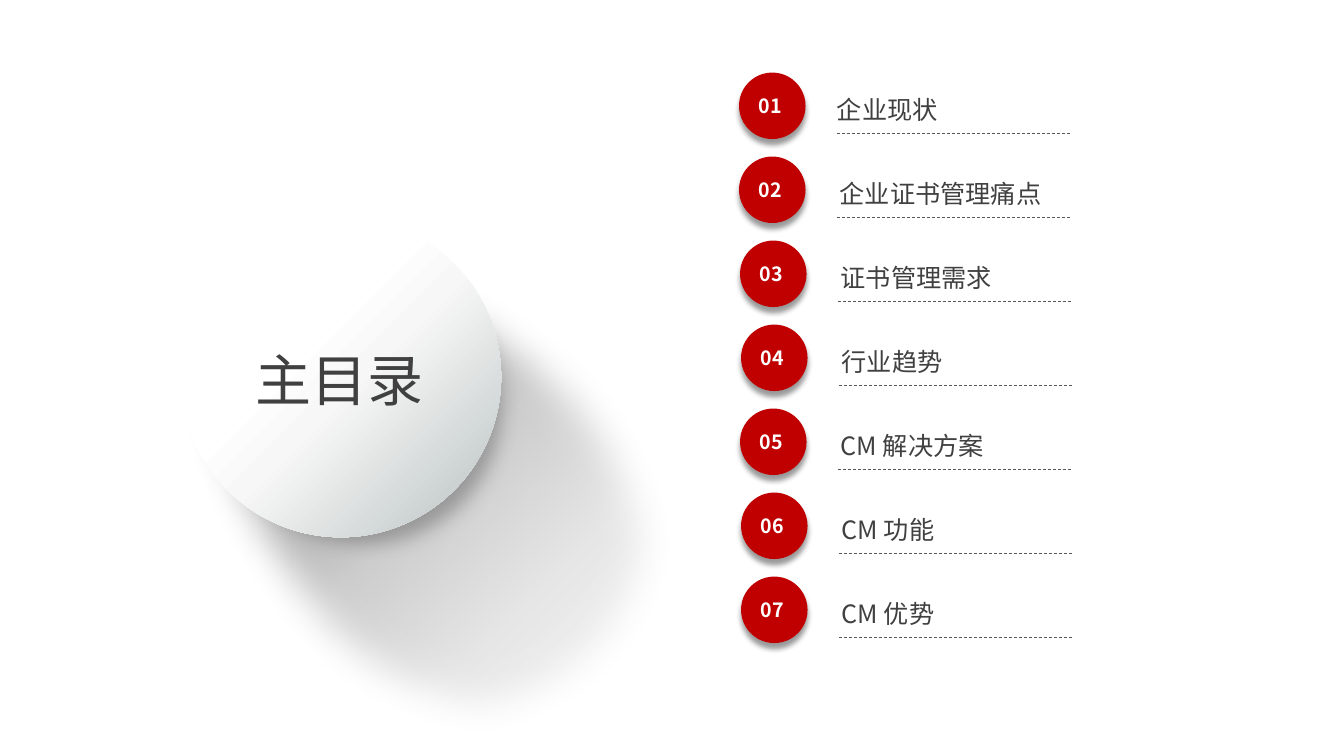
from pptx import Presentation
from pptx.dml.color import RGBColor
from pptx.enum.dml import MSO_LINE
from pptx.enum.shapes import MSO_CONNECTOR, MSO_SHAPE
from pptx.enum.text import MSO_ANCHOR, MSO_AUTO_SIZE, PP_ALIGN
from pptx.oxml import parse_xml
from pptx.oxml.ns import nsdecls, qn
from pptx.util import Inches, Pt

COLORS = {"red": "C00000", "text": "404040", "rule": "595959", "white": "FFFFFF",
          "pale": "F7F7F7", "silver": "B8C0C0", "black": "000000", "shade": "494949"}
FONT = "Noto Sans CJK SC"
PITCH = 5 / 6
ITEMS = [("企业现状", 7.33), ("企业证书管理痛点", 7.33), ("证书管理需求", 7.34),
         ("行业趋势", 7.35), ("CM 解决方案", 7.34), ("CM 功能", 7.35), ("CM 优势", 7.35)]
SHADOW_START = (-2.15, 0)
SHADOW_CURVES = [
    [(-1.89, -1.57), (-1.18, -2.87), (0.01, -2.87)],
    [(1.2, -2.87), (1.97, -1.54), (2.17, 0)],
    [(2.37, 1.57), (1.2, 2.87), (0.01, 2.87)],
    [(-1.18, 2.87), (-2.4, 1.56), SHADOW_START],
]
SHADOW_STOPS = [(0, "black", 100), (17, "black", 46), (34, "black", 43), (51, "black", 20),
                (65, "black", 10), (78, "black", 5), (100, "black", 0)]
DISC_STOPS = [(0, "white", 100), (43, "pale", 100), (100, "silver", 100)]
FACE_STOPS = [(11, "white", 100), (39, "white", 100), (53, "pale", 100), (100, "silver", 100)]


def curve_points(start, curves, steps=24):
    points = [start]
    for a, b, c in curves:
        p0 = points[-1]
        for k in range(1, steps + 1):
            t = k / steps
            u = 1 - t
            weights = (u**3, 3 * u * u * t, 3 * u * t * t, t**3)
            points.append(tuple(sum(w * q[i] for w, q in zip(weights, (p0, a, b, c)))
                                for i in (0, 1)))
    return points


def rgb(name):
    return RGBColor.from_string(COLORS[name])


class Deck:
    def __init__(self, prs):
        self.slide = prs.slides.add_slide(prs.slide_layouts[6])
        self.shapes = self.slide.shapes

    def gradient(self, sp, stops, angle):
        sp.fill.gradient()
        gs = "".join(
            f'<a:gs pos="{pos * 1000}"><a:srgbClr val="{COLORS[color]}">'
            f'<a:alpha val="{alpha * 1000}"/></a:srgbClr></a:gs>'
            for pos, color, alpha in stops)
        xml = (f'<a:gradFill {nsdecls("a")} rotWithShape="1"><a:gsLst>{gs}</a:gsLst>'
               f'<a:lin ang="{angle * 60000}" scaled="0"/></a:gradFill>')
        spPr = sp._element.spPr
        spPr.replace(spPr.find(qn("a:gradFill")), parse_xml(xml))

    def effect(self, sp, xml):
        sp._element.spPr.find(qn("a:effectLst")).append(parse_xml(xml))

    def drop_shadow(self, sp, color, blur, dist, angle):
        self.effect(sp, f'<a:outerShdw {nsdecls("a")} blurRad="{Pt(blur)}" dist="{Pt(dist)}" '
                        f'dir="{angle * 60000}" algn="ctr" rotWithShape="0">'
                        f'<a:srgbClr val="{COLORS[color]}"><a:alpha val="40000"/></a:srgbClr>'
                        f'</a:outerShdw>')

    def add_run(self, tf, text, align, color, **style):
        p = tf.paragraphs[0]
        p.alignment = align
        r = p.add_run()
        r.text = text
        for key, value in {"name": FONT, **style}.items():
            setattr(r.font, key, value)
        r.font.color.rgb = rgb(color)
        r._r.get_or_add_rPr().find(qn("a:latin")).addnext(
            parse_xml(f'<a:ea {nsdecls("a")} typeface="{FONT}"/>'))

    def text(self, x, y, w, h, text, size, align):
        tf = self.shapes.add_textbox(Inches(x), Inches(y), Inches(w), Inches(h)).text_frame
        tf.word_wrap = True
        tf.auto_size = MSO_AUTO_SIZE.SHAPE_TO_FIT_TEXT
        self.add_run(tf, text, align, "text", size=Pt(size))

    def circle(self, x, y, d):
        sp = self.shapes.add_shape(MSO_SHAPE.OVAL, Inches(x), Inches(y), Inches(d), Inches(d))
        sp.line.fill.background()
        sp.shadow.inherit = False
        return sp

    def badge(self, x, y, label):
        sp = self.circle(x, y, 0.66)
        sp.fill.solid()
        sp.fill.fore_color.rgb = rgb("red")
        self.drop_shadow(sp, "black", 4, 4, 90)
        sp.text_frame.vertical_anchor = MSO_ANCHOR.MIDDLE
        self.add_run(sp.text_frame, label, PP_ALIGN.JUSTIFY, "white", size=Pt(14), bold=True)

    def rule(self, x, y, w):
        line = self.shapes.add_connector(MSO_CONNECTOR.STRAIGHT, Inches(x), Inches(y),
                                         Inches(x + w), Inches(y))
        line.line.color.rgb = rgb("rule")
        line.line.width = Pt(0.5)
        line.line.dash_style = MSO_LINE.DASH
        line._element.spPr.append(parse_xml(f'<a:effectLst {nsdecls("a")}/>'))

    def long_shadow(self, cx, cy):
        points = [(Inches(cx + x), Inches(cy + y))
                  for x, y in curve_points(SHADOW_START, SHADOW_CURVES)]
        builder = self.shapes.build_freeform(*points[0])
        builder.add_line_segments(points[1:], close=True)
        sp = builder.convert_to_shape()
        sp.rotation = 315
        sp.line.fill.background()
        sp.shadow.inherit = False
        self.gradient(sp, SHADOW_STOPS, 90)
        self.effect(sp, f'<a:softEdge {nsdecls("a")} rad="{Inches(0.4)}"/>')


def main():
    prs = Presentation()
    prs.slide_width, prs.slide_height = Inches(13.33), Inches(7.5)
    deck = Deck(prs)

    deck.long_shadow(4.22, 4.84)
    disc = deck.circle(2.17, 2.6, 2.68)
    deck.gradient(disc, DISC_STOPS, 45)
    deck.drop_shadow(disc, "shade", 14, 11, 45)
    deck.gradient(deck.circle(1.79, 2.15, 3.18), FACE_STOPS, 45)
    deck.text(2.2, 3.38, 2.34, 0.77, "主目录", 40, PP_ALIGN.CENTER)

    for i, (title, x) in enumerate(ITEMS):
        y = 0.72 + i * PITCH
        text_x, align = (x + 0.9, PP_ALIGN.LEFT) if i else (7.57, PP_ALIGN.CENTER)
        deck.text(text_x, y + 0.17, 2.46, 0.4, title, 18, align)
        deck.rule(x + 0.97, y + 0.6, 2.32)
        deck.badge(x, y, f"{i + 1:02}")

    prs.save("out.pptx")


if __name__ == "__main__":
    main()
